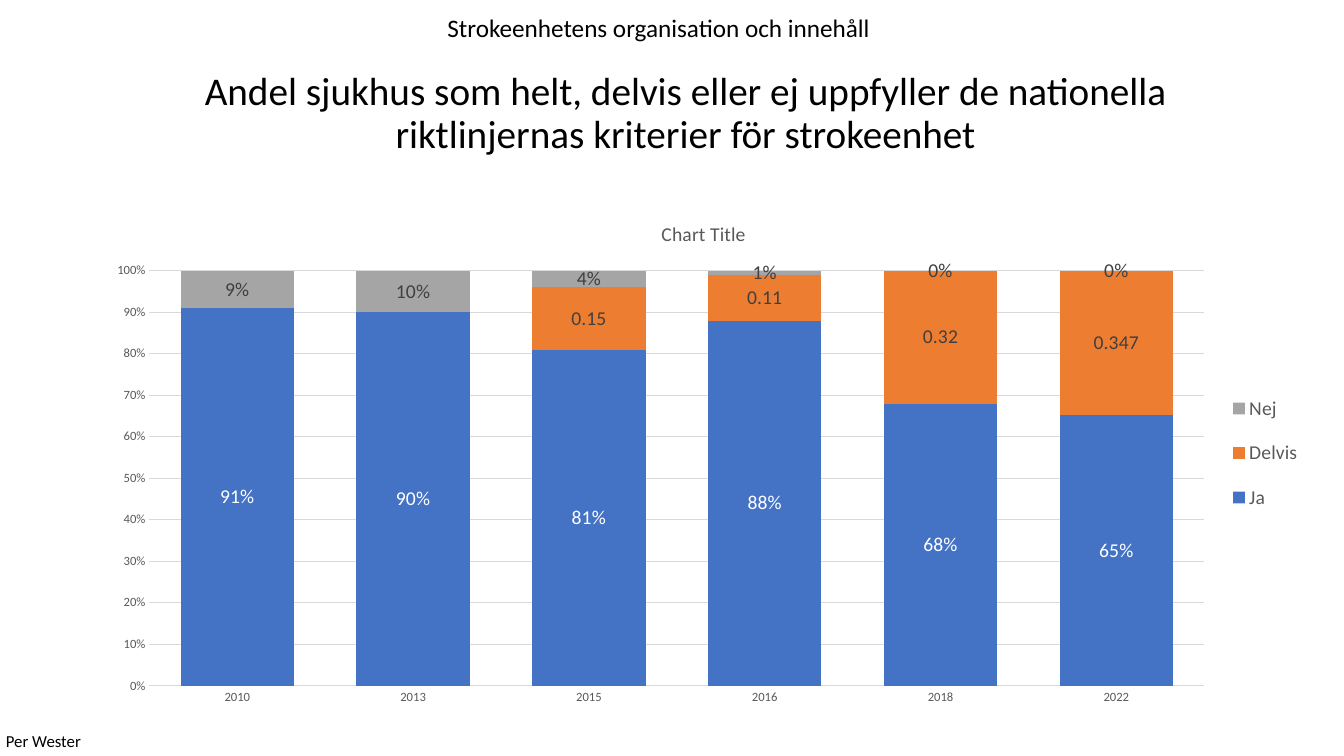
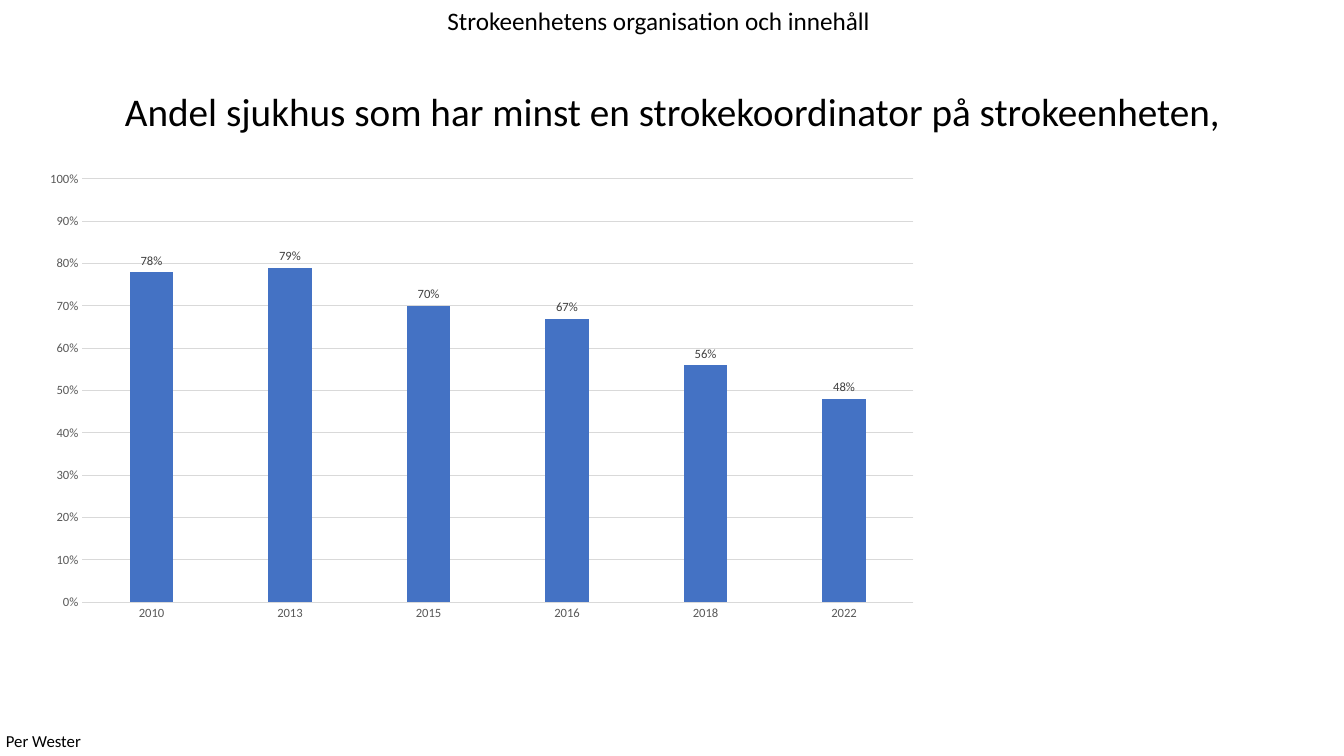
"""Build two slides on how Swedish stroke units are organised."""
from dataclasses import dataclass

from lxml import etree
from pptx import Presentation, util as u
from pptx.chart.data import CategoryChartData
from pptx.dml.color import RGBColor
from pptx.enum import chart as ch, text as tx
from pptx.oxml import ns


@dataclass(frozen=True)
class Theme:
    """Shared font, colours and type sizes."""
    font: str = "Calibri"
    ink: str = "000000"
    grey: str = "595959"
    dark: str = "404040"
    rule: str = "D9D9D9"
    white: str = "FFFFFF"
    blue: str = "4472C4"
    orange: str = "ED7D31"
    silver: str = "A5A5A5"
    title: int = 28
    head: int = 18
    label: int = 14
    foot: int = 12
    base: int = 10
    axis: int = 9


T = Theme()
YEARS = ("2010", "2013", "2015", "2016", "2018", "2022")
HEAD = "Strokeenhetens organisation och innehåll"
FOOT = "Per Wester"


def style(font, size, color):
    """Set face, size and colour of a font."""
    font.name, font.size, font.bold = T.font, u.Pt(size), False
    font.color.rgb = RGBColor.from_string(color)


def write(frame, words, size, align):
    """Write one paragraph into a text frame."""
    frame.text = words
    para = frame.paragraphs[0]
    para.alignment = align
    for run in para.runs:
        style(run.font, size, T.ink)
    return para


def add_title(slide, words, left, top):
    """Place and fill the title placeholder."""
    box = slide.shapes.title
    box.left, box.top = u.Cm(left), u.Cm(top)
    box.width, box.height = u.Cm(29.21), u.Cm(3.68)
    frame = box.text_frame
    frame.auto_size = tx.MSO_AUTO_SIZE.NONE
    frame.vertical_anchor = tx.MSO_ANCHOR.MIDDLE
    write(frame, words, T.title, tx.PP_ALIGN.CENTER).line_spacing = 0.9


def add_note(slide, words, place, size, align, wrap):
    """Add a text box that grows with its text."""
    box = slide.shapes.add_textbox(*map(u.Cm, place))
    frame = box.text_frame
    frame.word_wrap = wrap
    frame.auto_size = tx.MSO_AUTO_SIZE.SHAPE_TO_FIT_TEXT
    write(frame, words, size, align)


def add_slide(deck, title, left, top, head):
    """Add a slide with its title, heading line and footer."""
    slide = deck.slides.add_slide(deck.slide_layouts[5])
    add_title(slide, title, left, top)
    add_note(slide, HEAD, (8.13, head, 16.94, 1.02), T.head,
             tx.PP_ALIGN.CENTER, True)
    add_note(slide, FOOT, (-0.1, 18.29, 2.41, 0.76), T.foot,
             tx.PP_ALIGN.LEFT, False)
    return slide


def style_axes(chart):
    """Give both axes plain labels and pale rules."""
    cat, val = chart.category_axis, chart.value_axis
    for axis in (cat, val):
        axis.major_tick_mark = axis.minor_tick_mark = ch.XL_TICK_MARK.NONE
        style(axis.tick_labels.font, T.axis, T.grey)
    val.has_major_gridlines = True
    for line in (cat.format.line, val.major_gridlines.format.line):
        line.color.rgb = RGBColor.from_string(T.rule)
        line.width = u.Pt(0.75)
    val.format.line.fill.background()
    val.tick_labels.number_format = "0%"
    val.tick_labels.number_format_is_linked = False


def add_bars(slide, kind, place, rows, gap, lap, size, spot):
    """Add a column chart; rows hold name, values, fill, label ink, format."""
    data = CategoryChartData()
    data.categories = YEARS
    for name, vals, *_ in rows:
        data.add_series(name, vals)
    chart = slide.shapes.add_chart(kind, *map(u.Cm, place), data).chart
    style(chart.font, T.base, T.ink)
    chart.has_title = chart.has_legend = False
    style_axes(chart)
    plot = chart.plots[0]
    plot.gap_width, plot.overlap, plot.vary_by_categories = gap, lap, False
    for ser, (_, _, fill, ink, form) in zip(plot.series, rows):
        ser.invert_if_negative = False
        ser.format.fill.solid()
        ser.format.fill.fore_color.rgb = RGBColor.from_string(fill)
        tags = ser.data_labels
        tags.show_value, tags.position = True, spot
        tags.number_format, tags.number_format_is_linked = form, False
        style(tags.font, size, ink)
    return chart


def place_keys(chart, **parts):
    """Set the legend's place and size as shares of the chart."""
    root = chart.element
    pos = root.find(".//" + ns.qn("c:legendPos"))
    for old in pos.getparent().findall(ns.qn("c:layout")):
        pos.getparent().remove(old)
    lay = etree.Element(ns.qn("c:layout"))
    man = etree.SubElement(lay, ns.qn("c:manualLayout"))
    for tag in ("xMode", "yMode"):
        etree.SubElement(man, ns.qn("c:" + tag), val="edge")
    for tag, share in parts.items():
        etree.SubElement(man, ns.qn("c:" + tag), val=str(share))
    pos.addnext(lay)


def add_keys(chart, title):
    """Show the chart title and a legend on the right."""
    chart.has_title = chart.has_legend = True
    frame = chart.chart_title.text_frame
    frame.text = title
    style(frame.paragraphs[0].runs[0].font, T.label, T.grey)
    chart.legend.position = ch.XL_LEGEND_POSITION.RIGHT
    chart.legend.include_in_layout = False
    style(chart.legend.font, T.label, T.grey)
    place_keys(chart, x=0.93, y=0.34, w=0.06, h=0.3)


def main():
    """Build and save the deck."""
    deck = Presentation()
    deck.slide_width, deck.slide_height = u.Cm(33.87), u.Cm(19.05)
    kind, spot = ch.XL_CHART_TYPE, ch.XL_LABEL_POSITION

    slide = add_slide(deck, "Andel sjukhus som helt, delvis eller ej uppfyller "
                      "de nationella riktlinjernas kriterier för strokeenhet",
                      2.67, 1.04, 0.18)
    rows = (
        ("Ja", (0.91, 0.9, 0.81, 0.88, 0.68, 0.65), T.blue, T.white, "0%"),
        ("Delvis", (None, None, 0.15, 0.11, 0.32, 0.347),
         T.orange, T.dark, "General"),
        ("Nej", (0.09, 0.1, 0.04, 0.01, 0, 0), T.silver, T.dark, "0%"),
    )
    chart = add_bars(slide, kind.COLUMN_STACKED_100, (2.34, 5.08, 30.78, 12.93),
                     rows, 55, 100, T.label, spot.CENTER)
    add_keys(chart, "Chart Title")

    slide = add_slide(deck, "Andel sjukhus som har minst en strokekoordinator "
                      "på strokeenheten,", 2.34, 1.02, 0)
    rows = (("Series 1", (0.78, 0.79, 0.7, 0.67, 0.56, 0.48),
             T.blue, T.dark, "0%"),)
    chart = add_bars(slide, kind.COLUMN_CLUSTERED, (0.81, 4.09, 22.66, 11.79),
                     rows, 219, -27, T.axis, spot.OUTSIDE_END)
    chart.value_axis.minimum_scale, chart.value_axis.maximum_scale = 0, 1

    deck.save("out.pptx")


if __name__ == "__main__":
    main()
